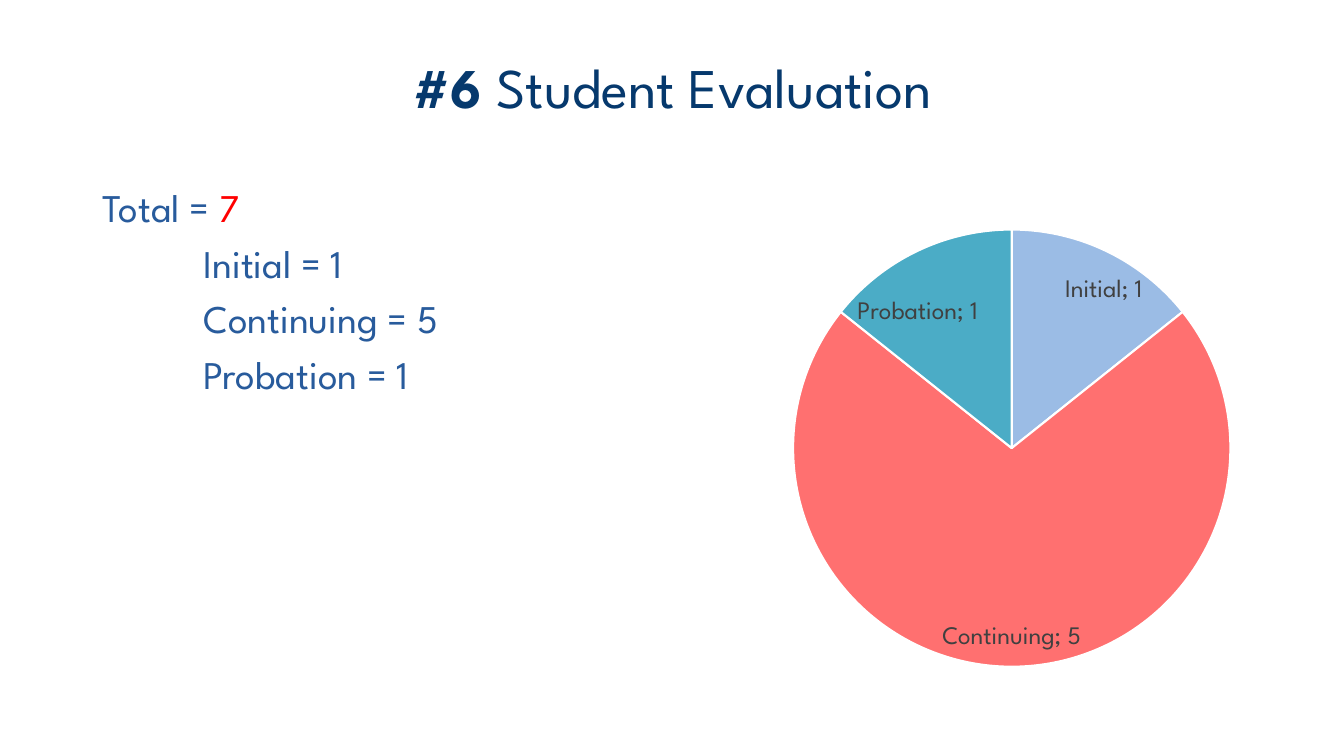
from dataclasses import dataclass

from lxml.etree import SubElement
from pptx import Presentation
from pptx.chart.data import CategoryChartData
from pptx.dml.color import RGBColor
from pptx.enum.chart import XL_CHART_TYPE, XL_LABEL_POSITION
from pptx.enum.text import MSO_ANCHOR, PP_ALIGN
from pptx.oxml import parse_xml
from pptx.oxml.ns import nsdecls, qn
from pptx.slide import Slide
from pptx.text.text import Font, _Paragraph
from pptx.util import Inches, Pt

FACE = "League Spartan"
NAVY, BLUE, RED = "06396D", "285B9C", "FF0000"


@dataclass
class Group:
    """One group of students and its slice colour."""
    name: str
    count: int
    color: str


GROUPS = [
    Group("Initial", 1, "9BBCE5"),
    Group("Continuing", 5, "FF7070"),
    Group("Probation", 1, "4BACC6"),
]


def paint(color: str) -> RGBColor:
    """Turn a hex string into a colour."""
    return RGBColor.from_string(color)


def style(font: Font, size: float, color: str, bold: bool = False) -> None:
    """Set face, size, colour and weight."""
    font.name, font.size, font.bold = FACE, Pt(size), bold
    font.color.rgb = paint(color)


def add_run(para: _Paragraph, text: str, size: float, color: str, bold: bool = False) -> None:
    """Append one styled run."""
    run = para.add_run()
    run.text = text
    style(run.font, size, color, bold)


def add_title(slide: Slide) -> None:
    """Place and fill the title."""
    title = slide.shapes.title
    title.left, title.top = Inches(0.67), Inches(0.48)
    title.width, title.height = Inches(12), Inches(0.75)
    title.text_frame.vertical_anchor = MSO_ANCHOR.MIDDLE
    para = title.text_frame.paragraphs[0]
    para.alignment = PP_ALIGN.CENTER
    add_run(para, "#6 ", 40, NAVY, True)
    add_run(para, "Student Evaluation", 40, NAVY)


def add_counts(slide: Slide) -> None:
    """List the total and the count of each group."""
    box = slide.shapes.add_textbox(Inches(0.67), Inches(1.77), Inches(5.6), Inches(4.68))
    frame = box.text_frame
    frame.word_wrap = True
    total = frame.paragraphs[0]
    total._p.get_or_add_pPr().set("marL", str(Inches(0.25)))
    add_run(total, "Total = ", 28, BLUE)
    add_run(total, str(sum(group.count for group in GROUPS)), 28, RED)
    for group in GROUPS:
        para = frame.add_paragraph()
        para._p.get_or_add_pPr().set("marL", str(Inches(1.25)))
        para.space_before = Pt(6)
        add_run(para, f"{group.name} = {group.count}", 28, BLUE)


def add_pie(slide: Slide) -> None:
    """Draw the pie of student groups."""
    data = CategoryChartData()
    data.categories = [group.name for group in GROUPS]
    data.add_series("Series 1", [group.count for group in GROUPS])
    chart = slide.shapes.add_chart(
        XL_CHART_TYPE.PIE, Inches(6.32), Inches(1.94), Inches(7.01), Inches(4.82), data
    ).chart
    chart.has_title = chart.has_legend = False
    chart.font.name, chart.font.size = "Arial", Pt(10)
    chart.font.color.rgb = paint("000000")
    plot = chart.plots[0]
    plot.vary_by_categories = True
    for index, group in enumerate(GROUPS):
        look = plot.series[0].points[index].format
        look.fill.solid()
        look.fill.fore_color.rgb = paint(group.color)
        look.line.color.rgb = paint("FFFFFF")
        look.line.width = Pt(1.5)
    labels = plot.series[0].data_labels
    labels.show_category_name = labels.show_value = True
    labels.show_percentage = False
    labels.position = XL_LABEL_POSITION.BEST_FIT
    style(labels.font, 18, "404040")
    mark = parse_xml(f"<c:separator {nsdecls('c')}>; </c:separator>")
    labels._element.find(qn("c:showBubbleSize")).addnext(mark)
    area = chart._chartSpace.chart.plotArea
    for old in area.findall(qn("c:layout")):
        area.remove(old)
    layout = parse_xml(f"<c:layout {nsdecls('c')}><c:manualLayout/></c:layout>")
    parts = [("layoutTarget", "inner"), ("xMode", "edge"), ("yMode", "edge"),
             ("x", "0.22"), ("y", "0.07"), ("w", "0.62"), ("h", "0.9")]
    for tag, value in parts:
        SubElement(layout[0], qn(f"c:{tag}")).set("val", value)
    area.insert(0, layout)


def main() -> None:
    """Build and save the slide."""
    deck = Presentation()
    deck.slide_width, deck.slide_height = Inches(13.33), Inches(7.5)
    slide = deck.slides.add_slide(deck.slide_layouts[5])
    add_title(slide)
    add_counts(slide)
    add_pie(slide)
    deck.save("out.pptx")


if __name__ == "__main__":
    main()
